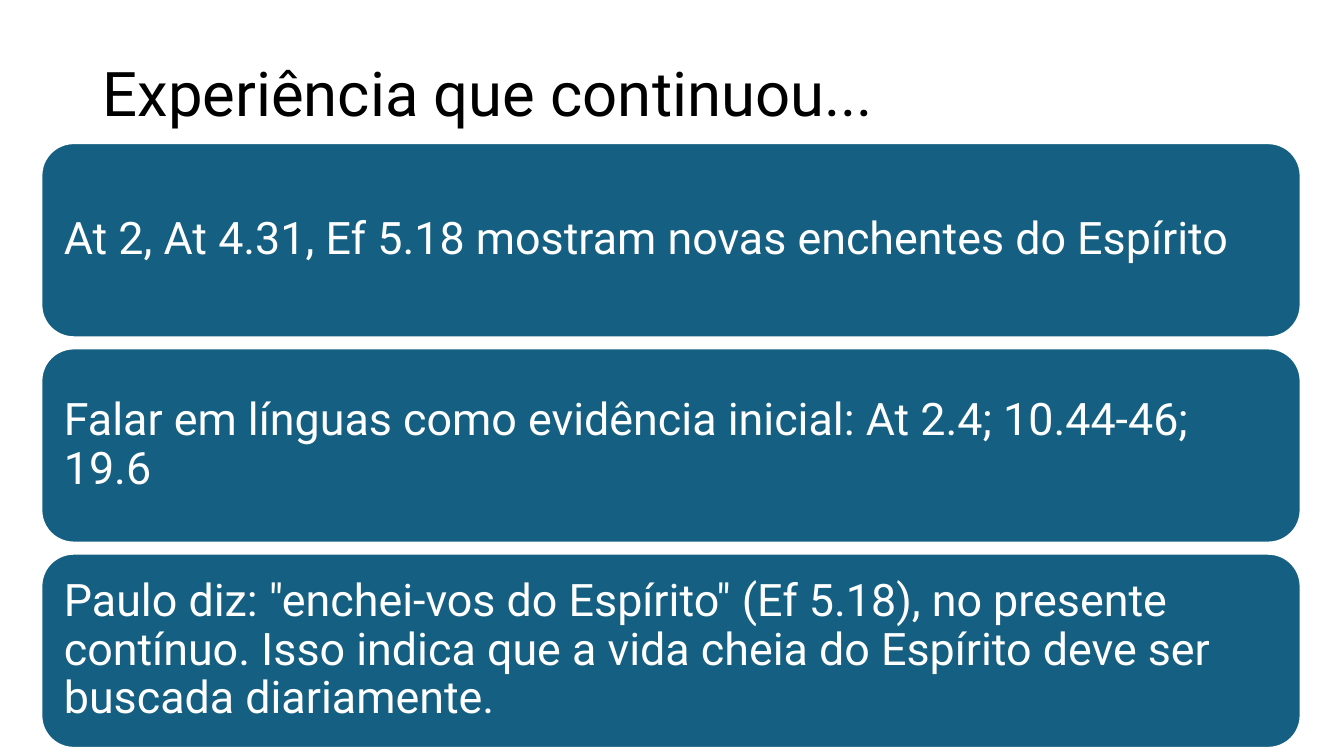
from pptx import Presentation
from pptx import util as u
from pptx.dml.color import RGBColor
from pptx.enum import shapes, text

WIDTH, HEIGHT = 13.33, 7.5
FONT = "Roboto"
COLORS = {"title": "000000", "card": "156082", "light": "FFFFFF"}
TITLE = "Experiência que continuou..."
POINTS = [
    "At 2, At 4.31, Ef 5.18 mostram novas enchentes do Espírito",
    "Falar em línguas como evidência inicial: At 2.4; 10.44-46; 19.6",
    'Paulo diz: "enchei-vos do Espírito" (Ef 5.18), no presente contínuo. '
    "Isso indica que a vida cheia do Espírito deve ser buscada diariamente.",
]


def color(name):
    return RGBColor.from_string(COLORS[name])


def write(shape, words, size, color_name):
    frame = shape.text_frame
    frame.word_wrap = True
    frame.vertical_anchor = text.MSO_ANCHOR.MIDDLE
    para = frame.paragraphs[0]
    para.text = words
    para.alignment = text.PP_ALIGN.LEFT
    para.line_spacing = 0.9
    para.font.name = FONT
    para.font.size = u.Pt(size)
    para.font.color.rgb = color(color_name)
    return frame


def add_title(page, box, words):
    title = page.shapes.add_textbox(*map(u.Inches, box))
    write(title, words, 44, "title")


def add_cards(page, box, points, gap):
    left, top, width, height = box
    card_height = (height - gap * (len(points) - 1)) / len(points)
    for row, words in enumerate(points):
        card_top = top + row * (card_height + gap)
        card = page.shapes.add_shape(
            shapes.MSO_SHAPE.ROUNDED_RECTANGLE,
            *map(u.Inches, (left, card_top, width, card_height)),
        )
        card.shadow.inherit = False
        card.fill.solid()
        card.fill.fore_color.rgb = color("card")
        card.line.color.rgb = color("light")
        card.line.width = u.Pt(1.5)
        frame = write(card, words, 32, "light")
        frame.margin_left = frame.margin_right = u.Inches(0.13)
        frame.margin_top = frame.margin_bottom = u.Inches(0.13)


def main():
    deck = Presentation()
    deck.slide_width, deck.slide_height = u.Inches(WIDTH), u.Inches(HEIGHT)
    page = deck.slides.add_slide(deck.slide_layouts[6])
    add_title(page, (0.92, 0.23, 11.5, 1.45), TITLE)
    add_cards(page, (0.41, 1.42, 12.49, 6.0), POINTS, gap=0.11)
    deck.save("out.pptx")


if __name__ == "__main__":
    main()
